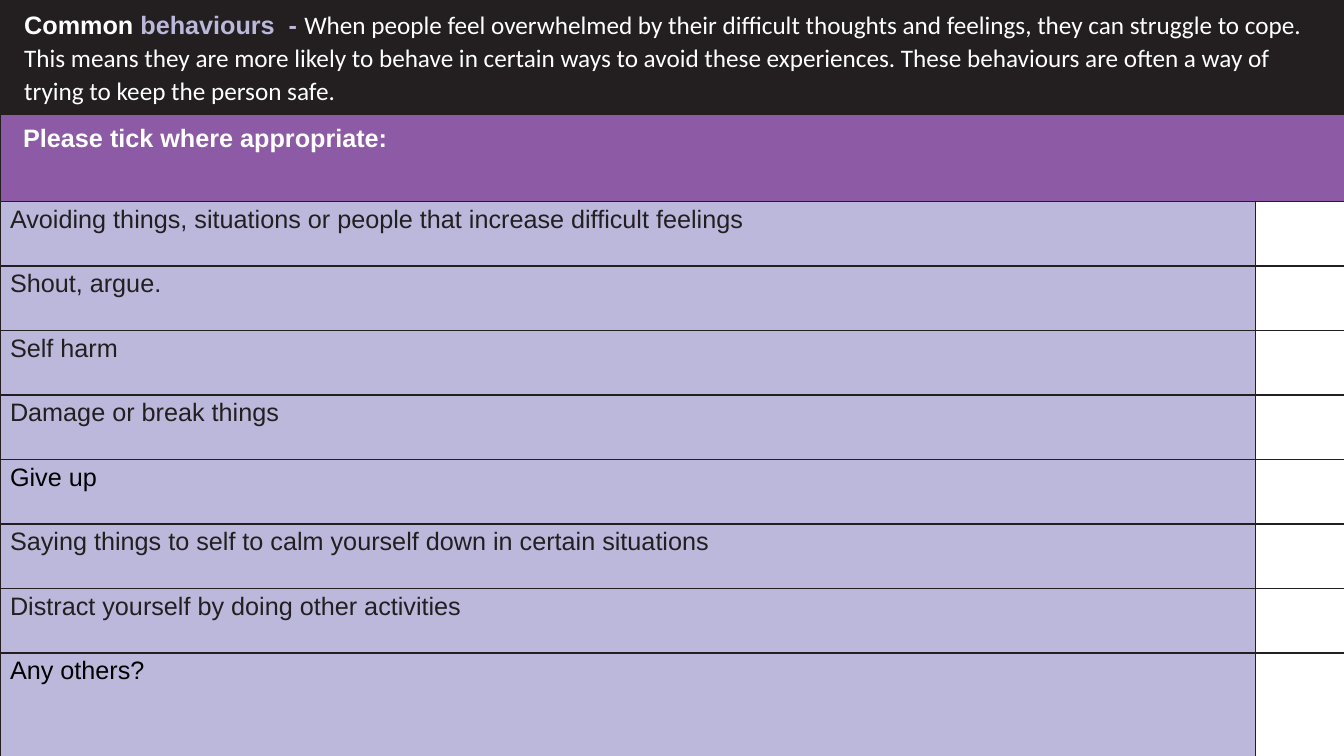
from dataclasses import dataclass

from lxml.etree import SubElement
from pptx import Presentation
from pptx.dml.color import RGBColor
from pptx.oxml.ns import qn
from pptx.util import Inches, Pt


@dataclass(frozen=True)
class Theme:
    ink: str = "231F20"
    white: str = "FFFFFF"
    black: str = "000000"
    lilac: str = "BBB8DC"
    purple: str = "8D5BA5"
    head: str = "Arial"
    body: str = "Calibri"
    size: float = 18
    line: float = 1
    lead: float = 1.07
    plain: str = "{2D5ABB26-0587-4C30-8999-92F81FD0307C}"


WIDE = (0.15, 0.08, 0.15, 0.08)
TIGHT = (0.02, 0.02, 0.02, 0)
SIDES = ("left", "top", "right", "bottom")
COLS = (12.45, 0.89)
ROWS = (0.86, 0.86, *[0.64] * 7, 1.04)
INTRO = (
    "When people feel overwhelmed by their difficult thoughts and feelings, "
    "they can struggle to cope. This means they are more likely to behave in "
    "certain ways to avoid these experiences. These behaviours are often a way "
    "of trying to keep the person safe."
)
ITEMS = (
    "Avoiding things, situations or people that increase difficult feelings",
    "Shout, argue.",
    "Self harm",
    "Damage or break things",
    "Give up",
    "Saying things to self to calm yourself down in certain situations",
    "Distract yourself by doing other activities",
    "Any others?",
)
DARK = ("Give up", "Any others?")


class Sheet:
    def __init__(self, deck, theme):
        self.theme = theme
        self.slide = deck.slides.add_slide(deck.slide_layouts[6])

    def table(self, rows, cols, height):
        frame = self.slide.shapes.add_table(
            len(rows), len(cols), 0, 0, Inches(sum(cols)), Inches(sum(rows)))
        grid = frame.table
        grid.first_row = grid.horz_banding = False
        grid._tbl.tblPr.find(qn("a:tableStyleId")).text = self.theme.plain
        for col, width in zip(grid.columns, cols):
            col.width = Inches(width)
        for row, tall in zip(grid.rows, rows):
            row.height = Inches(tall)
        frame.height = Inches(height)
        return grid

    def cell(self, cell, fill=None, edges="LRTB", pad=TIGHT):
        for side, gap in zip(SIDES, pad):
            setattr(cell, f"margin_{side}", Inches(gap))
        props = cell._tc.get_or_add_tcPr()
        for edge in edges:
            line = SubElement(props, qn(f"a:ln{edge}"), w=str(Pt(self.theme.line)))
            paint = SubElement(line, qn("a:solidFill"))
            SubElement(paint, qn("a:srgbClr"), val=self.theme.ink)
        if fill:
            cell.fill.solid()
            cell.fill.fore_color.rgb = RGBColor.from_string(fill)
        else:
            cell.fill.background()

    def text(self, cell, runs, before, indent=0.08):
        """Write runs of (text, colour, font, bold) into a cell."""
        para = cell.text_frame.paragraphs[0]
        form = {"line_spacing": self.theme.lead, "space_before": Pt(before)}
        for name, value in form.items():
            setattr(para, name, value)
        props = para._p.get_or_add_pPr()
        props.set("marL", str(Inches(indent)))
        props.set("indent", "0")
        for words, color, font, bold in runs:
            run = para.add_run()
            run.text = words
            form = {"size": Pt(self.theme.size), "name": font, "bold": bold}
            for name, value in form.items():
                setattr(run.font, name, value)
            run.font.color.rgb = RGBColor.from_string(color)


def main():
    deck = Presentation()
    deck.slide_width, deck.slide_height = Inches(13.33), Inches(7.5)
    theme = Theme()
    sheet = Sheet(deck, theme)
    grid = sheet.table(ROWS, COLS, 7.58)

    intro = [
        ("Common ", theme.white, theme.head, True),
        ("behaviours  - ", theme.lilac, theme.head, True),
        (INTRO, theme.white, theme.body, False),
    ]
    prompt = [("Please tick where appropriate:", theme.white, theme.head, True)]
    bands = (
        (intro, theme.ink, "", 5, 0.09),
        (prompt, theme.purple, "LRB", 3.4, 0.08),
    )
    for row, (runs, fill, edges, before, indent) in enumerate(bands):
        band = grid.cell(row, 0)
        band.merge(grid.cell(row, 1))
        sheet.cell(band, fill, edges, WIDE)
        sheet.text(band, runs, before, indent)

    for row, item in enumerate(ITEMS, len(bands)):
        label = grid.cell(row, 0)
        color = theme.black if item in DARK else theme.ink
        sheet.cell(label, theme.lilac)
        sheet.text(label, [(item, color, theme.head, False)], 4)
        sheet.cell(grid.cell(row, 1))

    deck.save("out.pptx")


if __name__ == "__main__":
    main()
